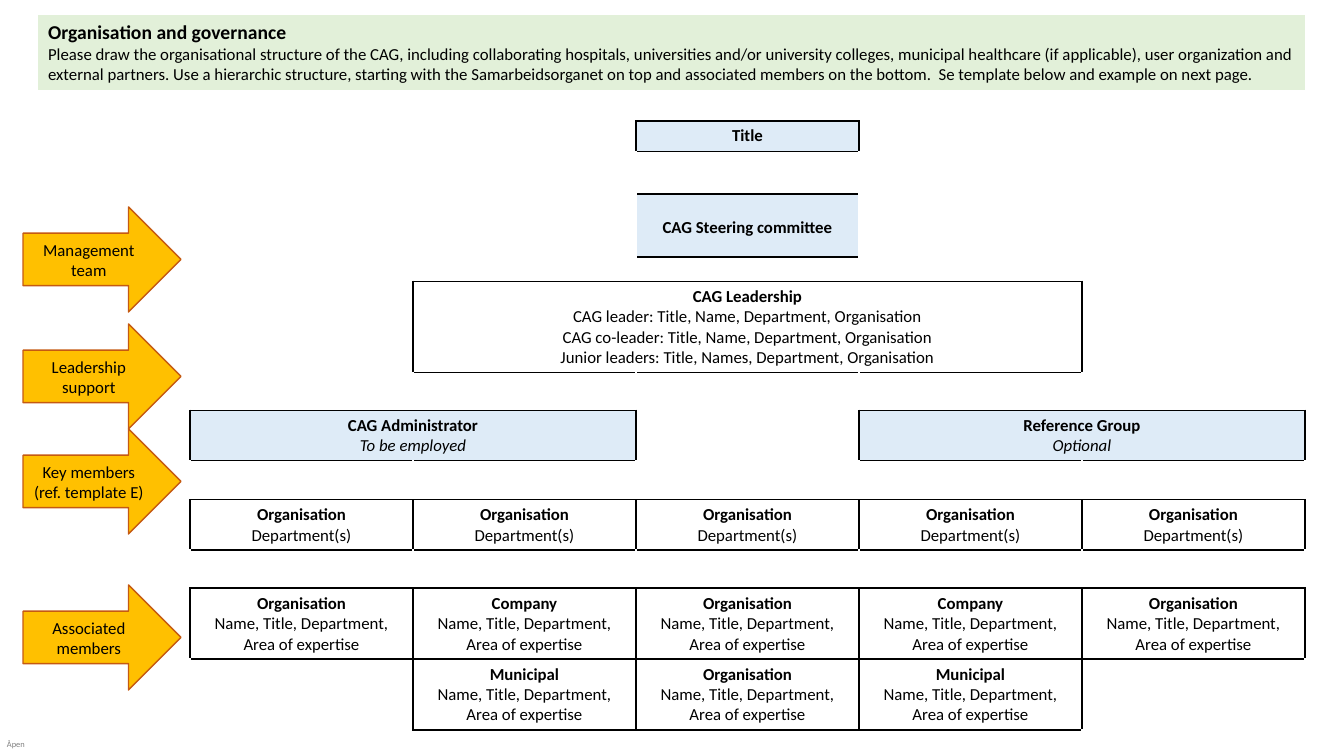
from lxml import etree
from pptx import Presentation
from pptx import util as u
from pptx.dml.color import RGBColor
from pptx.enum import shapes, text
from pptx.oxml.ns import qn

PX = 12192000 / 1344
BLACK, WHITE, BLUE, GREEN = "000000", "FFFFFF", "DEEBF7", "E2F0D9"
GOLD, RUST = "FFC000", "C55A11"
CENTER, LEFT = text.PP_ALIGN.CENTER, text.PP_ALIGN.LEFT
TOP, MIDDLE = text.MSO_ANCHOR.TOP, text.MSO_ANCHOR.MIDDLE


def px(length):
    return u.Emu(int(length * PX))


def colour(hex_string):
    return RGBColor.from_string(hex_string)


def write(frame, lines, size=12, align=CENTER, anchor=TOP, alpha=None):
    """Fill a text frame; each line is (text, font attributes)."""
    frame.word_wrap = True
    frame.vertical_anchor = anchor
    for i, (words, style) in enumerate(lines):
        paragraph = frame.paragraphs[0] if i == 0 else frame.add_paragraph()
        paragraph.alignment = align
        run = paragraph.add_run()
        run.text = words
        font = run.font
        font.name, font.size = "Calibri", u.Pt(style.get("size", size))
        font.bold, font.italic = style.get("bold", False), style.get("italic", False)
        font.color.rgb = colour(BLACK)
        if alpha:
            tint = run._r.find(".//" + qn("a:srgbClr"))
            etree.SubElement(tint, qn("a:alpha"), val=str(alpha * 1000))


class GovernanceSlide:
    def __init__(self, deck):
        self.slide = deck.slides.add_slide(deck.slide_layouts[5])

    def header(self, box, lines):
        title = self.slide.shapes.title
        title.left, title.top, title.width, title.height = map(px, box)
        title.fill.solid()
        title.fill.fore_color.rgb = colour(GREEN)
        title.text_frame.auto_size = text.MSO_AUTO_SIZE.NONE
        write(title.text_frame, lines, align=LEFT)

    def shape(self, kind, box, fill, line, width, words=None):
        item = self.slide.shapes.add_shape(kind, *map(px, box))
        item.shadow.inherit = False
        item.fill.solid()
        item.fill.fore_color.rgb = colour(fill)
        item.line.color.rgb = colour(line)
        item.line.width = u.Pt(width)
        if words:
            write(item.text_frame, [(words, {})], anchor=MIDDLE)

    def label(self, box, words):
        frame = self.slide.shapes.add_textbox(*map(px, box)).text_frame
        frame.margin_left = frame.margin_right = frame.margin_top = frame.margin_bottom = 0
        write(frame, [(words, {})], size=6, align=LEFT, alpha=50)
        frame.word_wrap = False

    def chart_table(self, left, top, col_width, heights, boxes, columns=5):
        table = self.slide.shapes.add_table(
            len(heights), columns, px(left), px(top),
            px(col_width * columns), px(sum(heights))).table
        table.first_row = table.horz_banding = False
        for column in table.columns:
            column.width = px(col_width)
        for row, height in zip(table.rows, heights):
            row.height = px(height)

        # An edge is black where it touches a box, white elsewhere
        filled = {(r, c + k): fill for r, c, span, fill, _ in boxes for k in range(span)}
        for r in range(len(heights)):
            for c in range(columns):
                cell = table.cell(r, c)
                sides = {"L": (r, c - 1), "R": (r, c + 1), "T": (r - 1, c), "B": (r + 1, c)}
                for side, neighbour in sides.items():
                    touches = (r, c) in filled or neighbour in filled
                    self.border(cell, side, BLACK if touches else WHITE)
                if filled.get((r, c)):
                    cell.fill.solid()
                    cell.fill.fore_color.rgb = colour(filled[r, c])
                else:
                    cell.fill.background()
                paragraph = cell.text_frame.paragraphs[0]._p
                etree.SubElement(paragraph, qn("a:endParaRPr"), sz="1200")

        for r, c, span, _, lines in boxes:
            if span > 1:
                table.cell(r, c).merge(table.cell(r, c + span - 1))
            write(table.cell(r, c).text_frame, lines)
        return table

    def border(self, cell, side, hex_string):
        line = etree.SubElement(cell._tc.get_or_add_tcPr(), qn("a:ln" + side), w="12700")
        fill = etree.SubElement(line, qn("a:solidFill"))
        etree.SubElement(fill, qn("a:srgbClr"), val=hex_string)


def entry(heading, *details, **style):
    return [(heading, {"bold": True})] + [(detail, style) for detail in details]


def main():
    deck = Presentation()
    deck.slide_width, deck.slide_height = px(1344), px(756)
    page = GovernanceSlide(deck)

    # Classification label and instructions
    page.label((7, 739, 20, 10), "Åpen")
    page.header((38, 15, 1267, 75), [
        ("Organisation and governance", {"bold": True, "size": 14}),
        ("Please draw the organisational structure of the CAG, including collaborating "
         "hospitals, universities and/or university colleges, municipal healthcare (if "
         "applicable), user organization and external partners. Use a hierarchic structure, "
         "starting with the Samarbeidsorganet on top and associated members on the bottom.  "
         "Se template below and example on next page.", {})])

    # Panel behind the steering committee
    page.shape(shapes.MSO_SHAPE.RECTANGLE, (636, 194, 223, 63), BLUE, BLACK, 1.5)

    # Hierarchy: row, column, span, fill, lines
    leadership = entry("CAG Leadership",
                       "CAG leader: Title, Name, Department, Organisation",
                       "CAG co-leader: Title, Name, Department, Organisation",
                       "Junior leaders: Title, Names, Department, Organisation")
    boxes = [(0, 2, 1, BLUE, entry("Title")),
             (2, 1, 3, None, leadership),
             (4, 0, 2, BLUE, entry("CAG Administrator", "To be employed", italic=True)),
             (4, 3, 2, BLUE, entry("Reference Group", "Optional", italic=True))]
    boxes += [(6, c, 1, None, entry("Organisation", "Department(s)")) for c in range(5)]
    associates = {8: (0, ["Organisation", "Company", "Organisation", "Company", "Organisation"]),
                  9: (1, ["Municipal", "Organisation", "Municipal"])}
    for row, (first, headings) in associates.items():
        boxes += [(row, c, 1, None, entry(heading, "Name, Title, Department, Area of expertise"))
                  for c, heading in enumerate(headings, first)]
    hierarchy = page.chart_table(190, 121, 223, [30, 130, 91, 38, 50, 39, 50, 38, 71, 71], boxes)

    # Steering committee, lowered onto its panel
    committee = hierarchy.cell(1, 2)
    committee.margin_top = px(66)
    write(committee.text_frame, entry("CAG Steering committee"))

    # Level arrows
    levels = {"Management team": 207, "Leadership support": 324,
              "Key members (ref. template E)": 429, "Associated members": 585}
    for level, top in levels.items():
        page.shape(shapes.MSO_SHAPE.RIGHT_ARROW, (23, top, 158, 105), GOLD, RUST, 1, level)

    deck.save("out.pptx")


if __name__ == "__main__":
    main()
